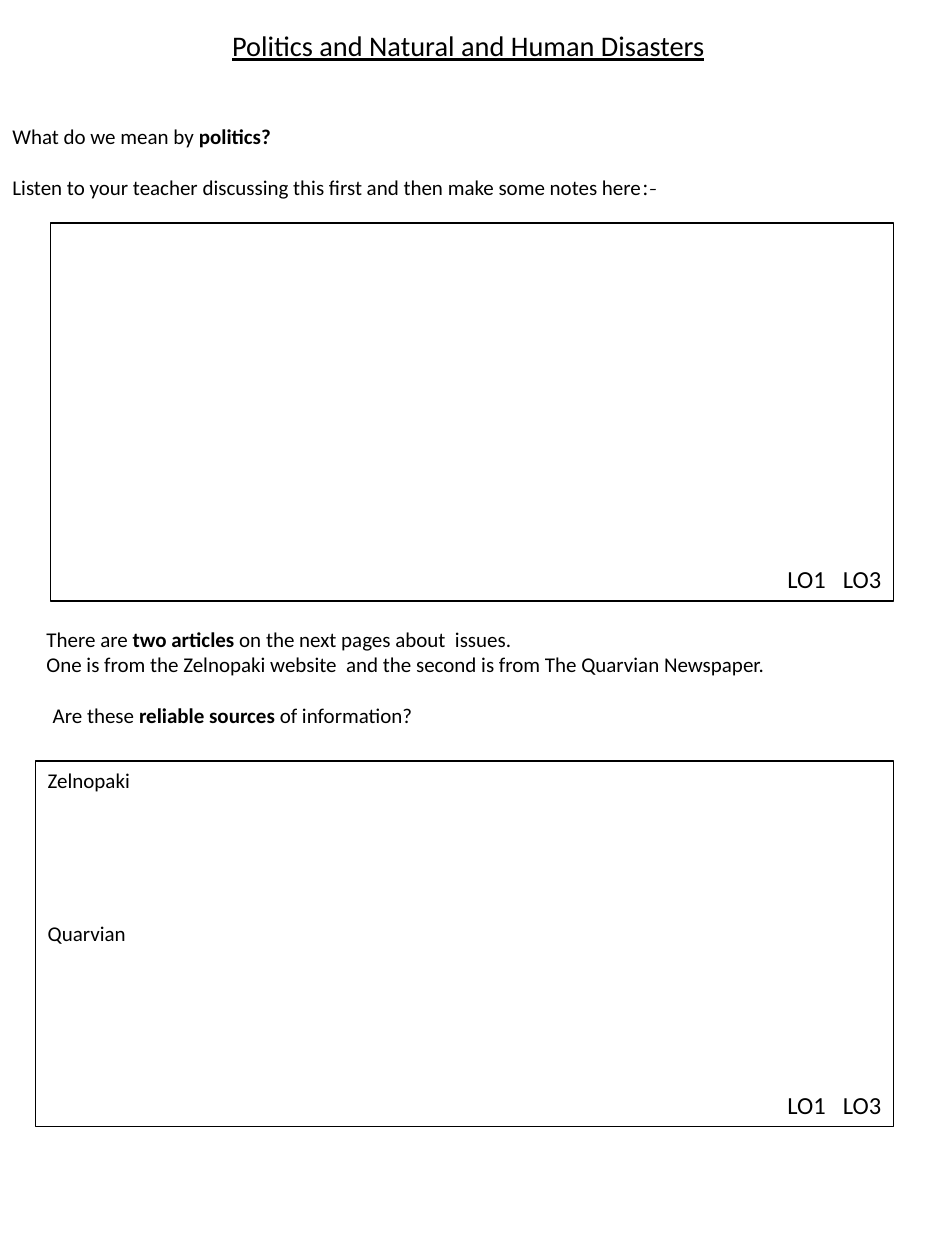
from lxml import etree
from pptx import Presentation
from pptx import util as u
from pptx.dml.color import RGBColor
from pptx.enum import shapes, text
from pptx.oxml.ns import qn

HUES = {"ink": "000000", "page": "FFFFFF"}
BODY = "Calibri"
SIZE = 12
LINE = 14.65


def hue(name):
    return RGBColor.from_string(HUES[name])


def style(run, size=SIZE, bold=False, face=BODY):
    font = run.font
    font.name, font.size, font.bold = face, u.Pt(size), bold
    font.color.rgb = hue("ink")


def write(frame, lines, size=SIZE):
    for i, (parts, gap) in enumerate(lines):
        para = frame.paragraphs[0] if i == 0 else frame.add_paragraph()
        para.alignment = text.PP_ALIGN.LEFT
        para.space_before = u.Pt(gap * LINE)
        for words, look in parts:
            run = para.add_run()
            run.text = words
            style(run, size, **look)


def label(slide, box, lines, size=SIZE):
    item = slide.shapes.add_textbox(*map(u.Inches, box))
    item.text_frame.word_wrap = False
    write(item.text_frame, lines, size)
    return item.text_frame


def heading(slide, box):
    title = slide.shapes.title
    title.left, title.top, title.width, title.height = map(u.Inches, box)
    frame = title.text_frame
    frame.text = "Politics and Natural and Human Disasters"
    frame.auto_size = text.MSO_AUTO_SIZE.NONE
    frame.vertical_anchor = text.MSO_ANCHOR.MIDDLE
    para = frame.paragraphs[0]
    para.alignment = text.PP_ALIGN.CENTER
    style(para.runs[0], 16.2)
    para.runs[0].font.underline = True


def panel(slide, box, lines=()):
    left, top, wide, high = box
    rect = slide.shapes.add_shape(shapes.MSO_SHAPE.RECTANGLE, *map(u.Inches, box))
    rect.shadow.inherit = False
    rect.fill.solid()
    rect.fill.fore_color.rgb = hue("page")
    rect.line.color.rgb = hue("ink")
    rect.line.width = u.Pt(0.75)
    rect.text_frame.vertical_anchor = text.MSO_ANCHOR.TOP
    write(rect.text_frame, lines)
    mark = (left + wide - 0.94, top + high - 0.34, 0.95, 0.34)
    frame = label(slide, mark, [([("LO1\tLO3", {})], 0)], 14)
    props = frame.paragraphs[0]._p.get_or_add_pPr()
    tabs = etree.SubElement(props, qn("a:tabLst"))
    etree.SubElement(tabs, qn("a:tab"), pos=str(u.Inches(0.44)), algn="l")


def intro(slide, box):
    label(slide, box, [
        ([("What do we mean by ", {}), ("politics?", {"bold": True})], 0),
        ([("Listen to your teacher discussing this first and then make some notes here", {}),
          (":-", {"face": "TeX Gyre Bonum"})], 1),
    ])


def task(slide, box):
    frame = label(slide, box, [
        ([("There are ", {}), ("two articles", {"bold": True}),
          (" on the next pages about  issues.", {})], 0),
        ([("One is from the Zelnopaki website  and the second is from The Quarvian Newspaper.", {})], 0),
        ([("Are these ", {}), ("reliable sources", {"bold": True}),
          (" of information?", {})], 1),
    ])
    frame.paragraphs[2]._p.get_or_add_pPr().set("indent", str(u.Inches(0.05)))


def main():
    deck = Presentation()
    deck.slide_width, deck.slide_height = u.Inches(7.5), u.Inches(10)
    slide = deck.slides.add_slide(deck.slide_layouts[5])
    heading(slide, (0.34, 0.2, 6.75, 0.32))
    intro(slide, (0, 0.93, 5.38, 0.71))
    panel(slide, (0.4, 1.77, 6.69, 3))
    task(slide, (0.27, 4.92, 6.01, 0.91))
    panel(slide, (0.28, 6.04, 6.81, 2.9),
          [([("Zelnopaki", {})], 0), ([("Quarvian", {})], 5)])
    deck.save("out.pptx")


if __name__ == "__main__":
    main()
